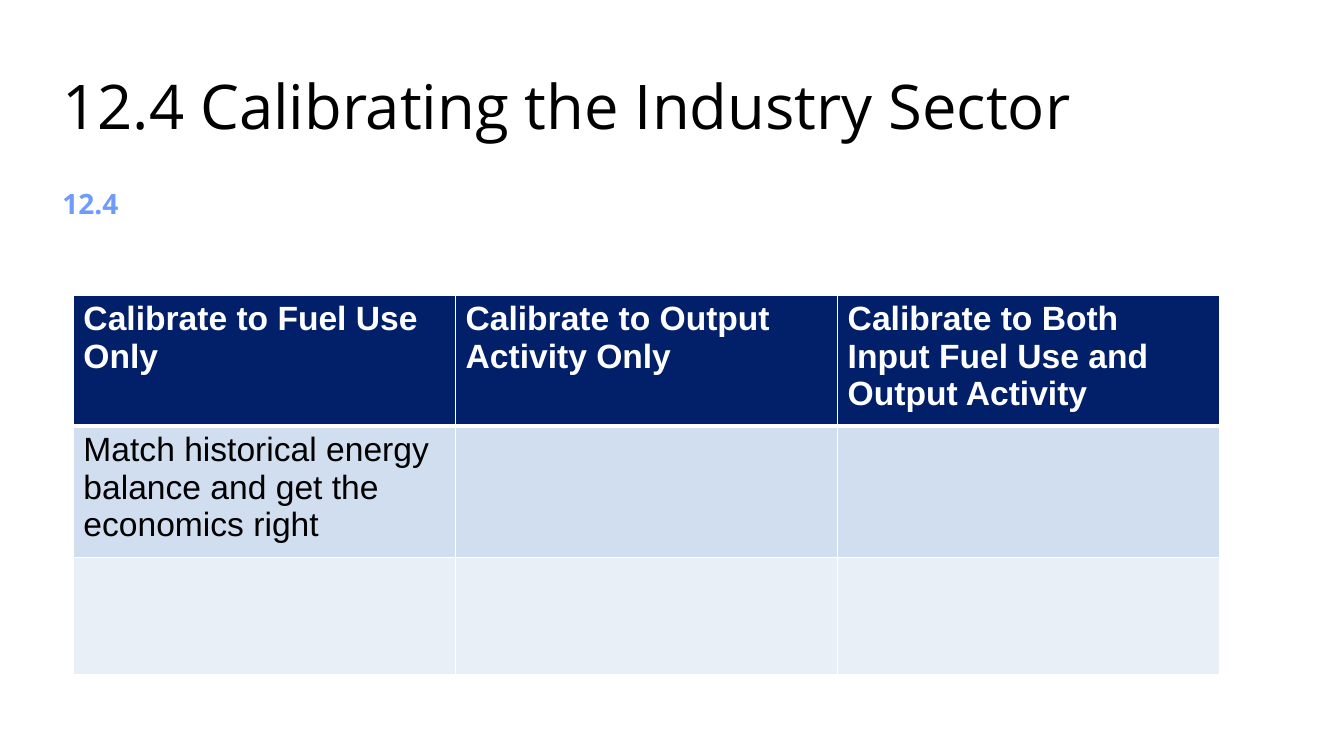
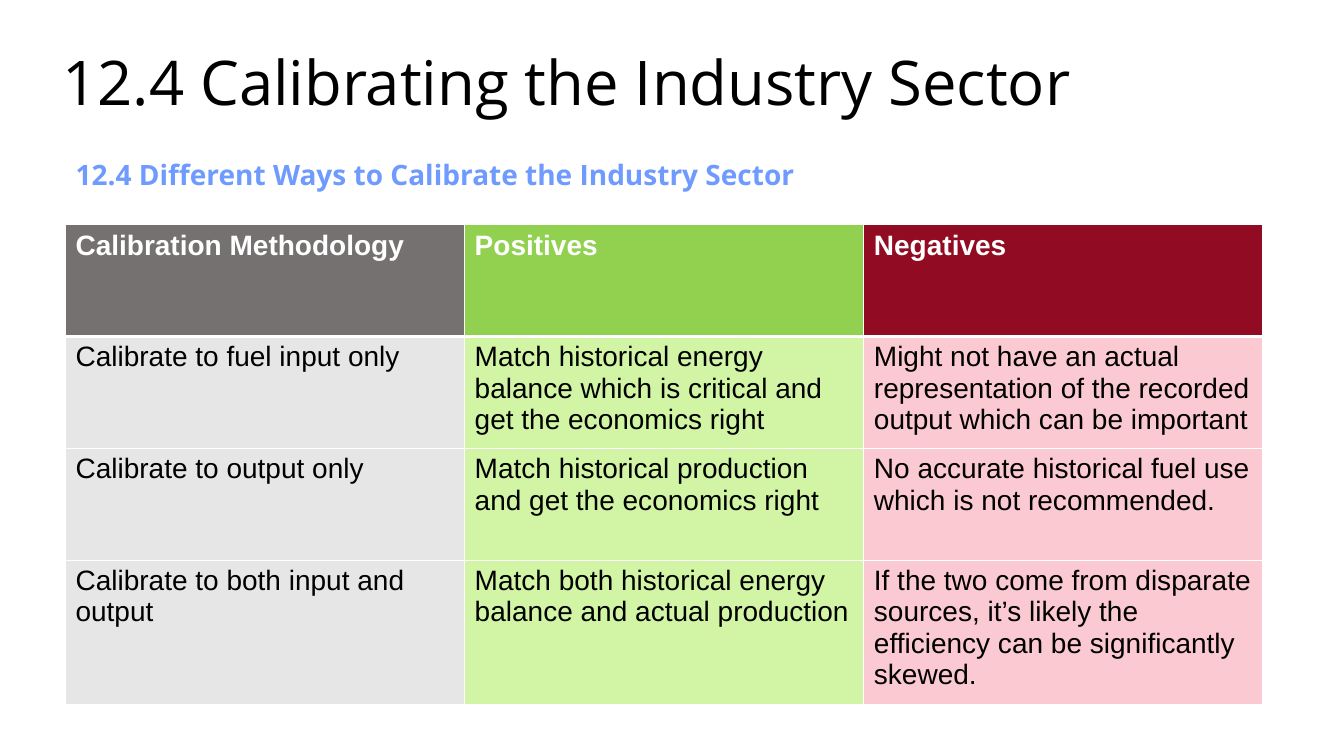
import pptx
import pptx.dml.color
import pptx.enum.text
import pptx.util
from pptx.oxml import parse_xml
from pptx.oxml.ns import nsdecls
from pptx.oxml.xmlchemy import OxmlElement

Cm, Pt = pptx.util.Cm, pptx.util.Pt
Anchor = pptx.enum.text.MSO_ANCHOR
Fit = pptx.enum.text.MSO_AUTO_SIZE
Align = pptx.enum.text.PP_ALIGN

# Content: positions in centimetres
TITLE = "12.4 Calibrating the Industry Sector"
SLIDES = [
    {
        "title_top": -0.28,
        "subtitle": "12.4",
        "subtitle_at": (1.32, 4.57),
        "table_at": (1.85, 7.44),
        "column_width": 9.63,
        "row_heights": [3.3, 3.3, 2.95],
        "text_style": "large_cell",
        "header_fills": ["navy"] * 3,
        "body_fills": [["blue_band"] * 3, ["pale_band"] * 3],
        "rows": [
            ["Calibrate to Fuel Use Only", "Calibrate to Output Activity Only",
             "Calibrate to Both Input Fuel Use and Output Activity"],
            ["Match historical energy balance and get the economics right", "", ""],
            ["", "", ""],
        ],
    },
    {
        "title_top": -0.89,
        "subtitle": "12.4 Different Ways to Calibrate the Industry Sector",
        "subtitle_at": (1.65, 3.84),
        "table_at": (1.65, 5.66),
        "column_width": 10.06,
        "row_heights": [2.82, 2.82, 2.82, 3.63],
        "text_style": "cell",
        "header_fills": ["grey", "green", "red"],
        "body_fills": [["pale_grey", "pale_green", "pale_red"]] * 3,
        "rows": [
            ["Calibration Methodology", "Positives", "Negatives"],
            ["Calibrate to fuel input only",
             "Match historical energy balance which is critical and get the economics right",
             "Might not have an actual representation of the recorded output which can be important"],
            ["Calibrate to output only",
             "Match historical production and get the economics right",
             "No accurate historical fuel use which is not recommended."],
            ["Calibrate to both input and output",
             "Match both historical energy balance and actual production",
             "If the two come from disparate sources, it’s likely the efficiency can be "
             "significantly skewed."],
        ],
    },
]

# Theme
THEME = {
    "colours": {
        "white": "FFFFFF", "black": "000000", "sky": "6F9AFE",
        "navy": "012069", "blue_band": "D0DEEF", "pale_band": "E9EFF7",
        "grey": "767171", "green": "92D050", "red": "910C22",
        "pale_grey": "E7E6E6", "pale_green": "D1F5A5", "pale_red": "FBC9D1",
    },
    "fonts": {
        "title": {"name": "Open Sans", "size": Pt(44), "bold": False},
        "subtitle": {"name": "Open Sans", "size": Pt(20), "bold": True},
        "large_cell": {"name": "Arial", "size": Pt(24)},
        "cell": {"name": "Arial", "size": Pt(20)},
    },
    "title_size": (30.84, 4.01),
    "title_left": 1.32,
    "subtitle_size": (24.26, 1.12),
    "rule": 1,
    "header_rule": 3,
}


def colour(name):
    return pptx.dml.color.RGBColor.from_string(THEME["colours"][name])


def set_values(target, values):
    for name, value in values.items():
        setattr(target, name, value)


def format_font(font, style, colour_name, **extra):
    set_values(font, {**THEME["fonts"][style], **extra})
    font.color.rgb = colour(colour_name)


# Title and subtitle placeholders
def fill_placeholder(shape, text, style, colour_name, position, size, frame, spacing):
    edges = ("left", "top", "width", "height")
    set_values(shape, dict(zip(edges, map(Cm, position + size))))
    shape.text_frame.text = text
    set_values(shape.text_frame, {"word_wrap": True, **frame})
    paragraph = shape.text_frame.paragraphs[0]
    properties = paragraph._p.get_or_add_pPr()
    set_values(paragraph, {"alignment": Align.LEFT, "space_before": Pt(0), **spacing})
    properties.set("marL", "0")
    properties.set("indent", "0")
    properties.append(OxmlElement("a:buNone"))
    format_font(paragraph.runs[0].font, style, colour_name)


def add_headings(slide, content):
    title, subtitle = slide.shapes.title, slide.placeholders[1]
    fill_placeholder(title, TITLE, "title", "black",
                     (THEME["title_left"], content["title_top"]), THEME["title_size"],
                     {"vertical_anchor": Anchor.BOTTOM, "auto_size": Fit.NONE},
                     {"line_spacing": 0.9})
    fill_placeholder(subtitle, content["subtitle"], "subtitle", "sky",
                     content["subtitle_at"], THEME["subtitle_size"],
                     {"vertical_anchor": Anchor.TOP, "auto_size": Fit.SHAPE_TO_FIT_TEXT},
                     {"space_after": Pt(12)})


# Table
def add_borders(cell, row_index):
    widths = dict.fromkeys(("lnL", "lnR", "lnT", "lnB"), THEME["rule"])
    if row_index < 2:
        widths["lnB" if row_index == 0 else "lnT"] = THEME["header_rule"]
    for edge, width in widths.items():
        cell._tc.get_or_add_tcPr().append(parse_xml(
            f'<a:{edge} {nsdecls("a")} w="{Pt(width)}"><a:solidFill>'
            f'<a:srgbClr val="{THEME["colours"]["white"]}"/></a:solidFill></a:{edge}>'))


def add_table(slide, content):
    rows, heights = content["rows"], content["row_heights"]
    columns = len(rows[0])
    left, top = content["table_at"]
    table = slide.shapes.add_table(
        len(rows), columns, Cm(left), Cm(top),
        Cm(columns * content["column_width"]), Cm(sum(heights))).table
    for column in table.columns:
        column.width = Cm(content["column_width"])
    fills = [content["header_fills"]] + content["body_fills"]
    for row_index, texts in enumerate(rows):
        table.rows[row_index].height = Cm(heights[row_index])
        is_header = row_index == 0
        for column_index, text in enumerate(texts):
            cell = table.cell(row_index, column_index)
            add_borders(cell, row_index)
            cell.fill.solid()
            cell.fill.fore_color.rgb = colour(fills[row_index][column_index])
            cell.text = text
            format_font(cell.text_frame.paragraphs[0].font, content["text_style"],
                        "white" if is_header else "black", bold=is_header)


def main():
    presentation = pptx.Presentation()
    set_values(presentation, {"slide_width": Cm(33.87), "slide_height": Cm(19.05)})
    for content in SLIDES:
        slide = presentation.slides.add_slide(presentation.slide_layouts[1])
        add_headings(slide, content)
        add_table(slide, content)
    presentation.save("out.pptx")


if __name__ == "__main__":
    main()
